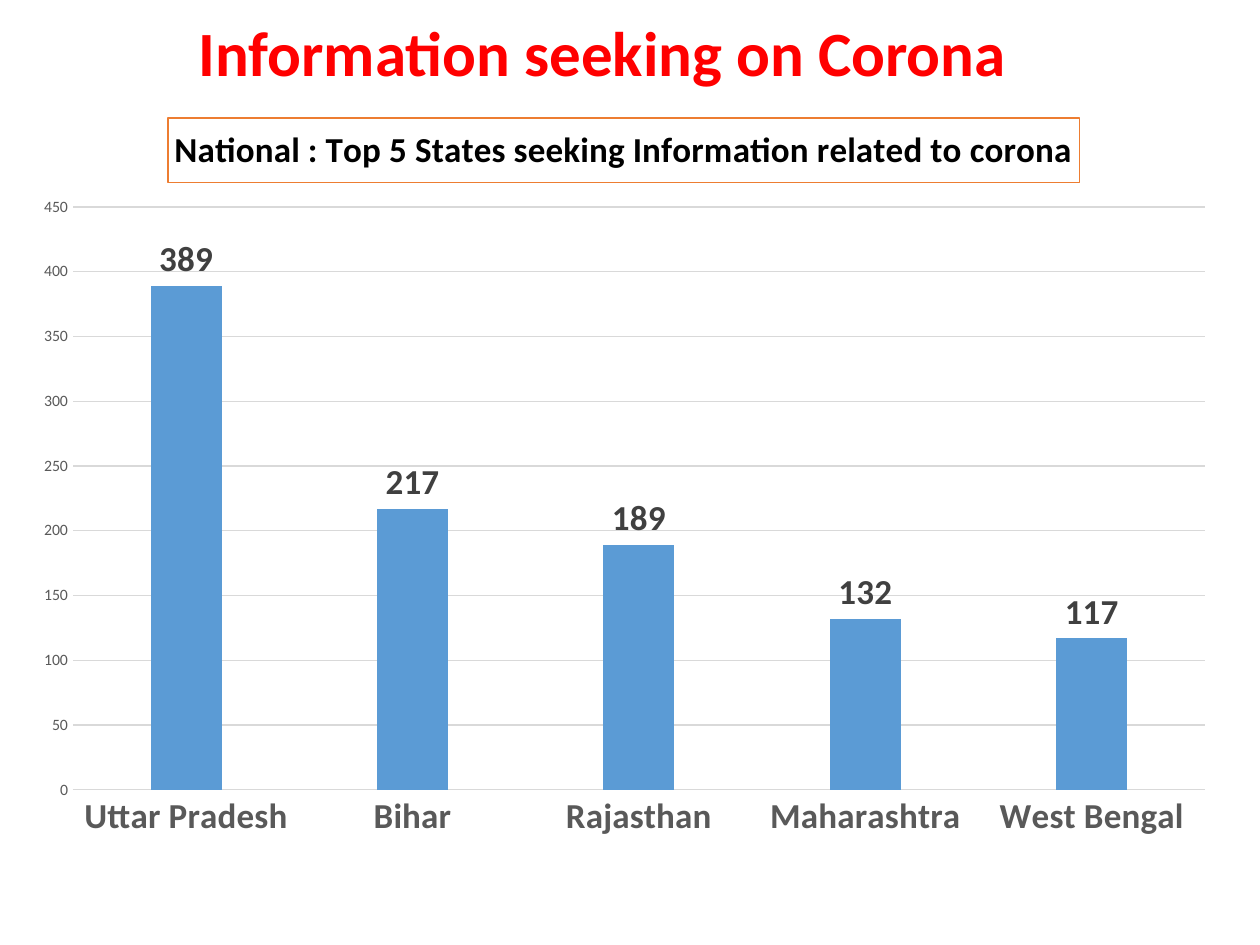
from lxml import etree
from pptx import Presentation
from pptx import util as u
from pptx.chart import data
from pptx.dml import color
from pptx.enum import chart as charts, text
from pptx.oxml import ns

EMU_PER_PX = 914400 / 126
COLORS = {"title": "FF0000", "black": "000000", "bar": "5B9BD5", "frame": "ED7D31",
          "axis": "595959", "label": "404040", "grid": "D9D9D9"}


def style_font(font, size, color_name, bold):
    values = {"name": "Calibri", "size": u.Pt(size), "bold": bold}
    for name, value in values.items():
        setattr(font, name, value)
    font.color.rgb = color.RGBColor.from_string(COLORS[color_name])


def style_line(line, color_name):
    line.color.rgb = color.RGBColor.from_string(COLORS[color_name])
    line.width = u.Pt(0.75)


presentation = Presentation()
presentation.slide_width = round(1260 * EMU_PER_PX)
presentation.slide_height = round(945 * EMU_PER_PX)
slide = presentation.slides.add_slide(presentation.slide_layouts[0])
subtitle = slide.placeholders[1].element
subtitle.getparent().remove(subtitle)

# Slide title
title = slide.shapes.title
title_box = {"left": 67, "top": 25, "width": 1071, "height": 72}
for name, pixels in title_box.items():
    setattr(title, name, round(pixels * EMU_PER_PX))
title.text_frame.text = "Information seeking on Corona"
title.text_frame.vertical_anchor = text.MSO_ANCHOR.BOTTOM
paragraph = title.text_frame.paragraphs[0]
paragraph.alignment = text.PP_ALIGN.CENTER
paragraph.line_spacing = 0.9
style_font(paragraph.runs[0].font, 36, "title", True)

# Column chart of the five states
chart_data = data.CategoryChartData()
chart_data.categories = ["Uttar Pradesh", "Bihar", "Rajasthan", "Maharashtra", "West Bengal"]
chart_data.add_series("Series 1", [389, 217, 189, 132, 117])
chart_box = [round(pixels * EMU_PER_PX) for pixels in (20, 97, 1210, 756)]
chart = slide.shapes.add_chart(
    charts.XL_CHART_TYPE.COLUMN_CLUSTERED, *chart_box, chart_data).chart
style_font(chart.font, 10, "black", False)
chart.has_legend = False

# Framed chart title
chart.has_title = True
chart_title = chart.chart_title
chart_title.include_in_layout = False
chart_title.text_frame.text = "National : Top 5 States seeking Information related to corona"
style_font(chart_title.text_frame.paragraphs[0].runs[0].font, 20, "black", True)
style_line(chart_title.format.line, "frame")

# Bars and their values
plot = chart.plots[0]
plot_format = {"gap_width": 219, "overlap": -27, "vary_by_categories": False,
               "has_data_labels": True}
for name, value in plot_format.items():
    setattr(plot, name, value)
fill = plot.series[0].format.fill
fill.solid()
fill.fore_color.rgb = color.RGBColor.from_string(COLORS["bar"])
labels = plot.data_labels
labels.show_value = True
labels.position = charts.XL_LABEL_POSITION.OUTSIDE_END
style_font(labels.font, 20, "label", True)

# Axes
for axis, size, bold in ((chart.category_axis, 20, True), (chart.value_axis, 9, False)):
    axis.major_tick_mark = axis.minor_tick_mark = charts.XL_TICK_MARK.NONE
    style_font(axis.tick_labels.font, size, "axis", bold)
style_line(chart.category_axis.format.line, "grid")
value_axis = chart.value_axis
value_axis.format.line.fill.background()
value_axis.minimum_scale, value_axis.maximum_scale, value_axis.major_unit = 0, 450, 50
style_line(value_axis.major_gridlines.format.line, "grid")

# Places of the chart title and plot area, as fractions of the chart
plot_area = chart.element.find(".//" + ns.qn("c:plotArea"))
if plot_area.find(ns.qn("c:layout")) is None:
    plot_area.insert(0, etree.Element(ns.qn("c:layout")))
title_place = {"xMode": "edge", "yMode": "edge", "x": 148 / 1210, "y": 21 / 756}
plot_place = {"layoutTarget": "inner", "xMode": "edge", "yMode": "edge",
              "x": 53 / 1210, "y": 110 / 756, "w": 1132 / 1210, "h": 583 / 756}
title_element = chart.element.find(".//" + ns.qn("c:title"))
for parent, place in ((title_element, title_place), (plot_area, plot_place)):
    layout = parent.find(ns.qn("c:layout"))
    manual = etree.SubElement(layout, ns.qn("c:manualLayout"))
    for name, value in place.items():
        etree.SubElement(manual, ns.qn("c:" + name)).set("val", str(value))

presentation.save("out.pptx")
